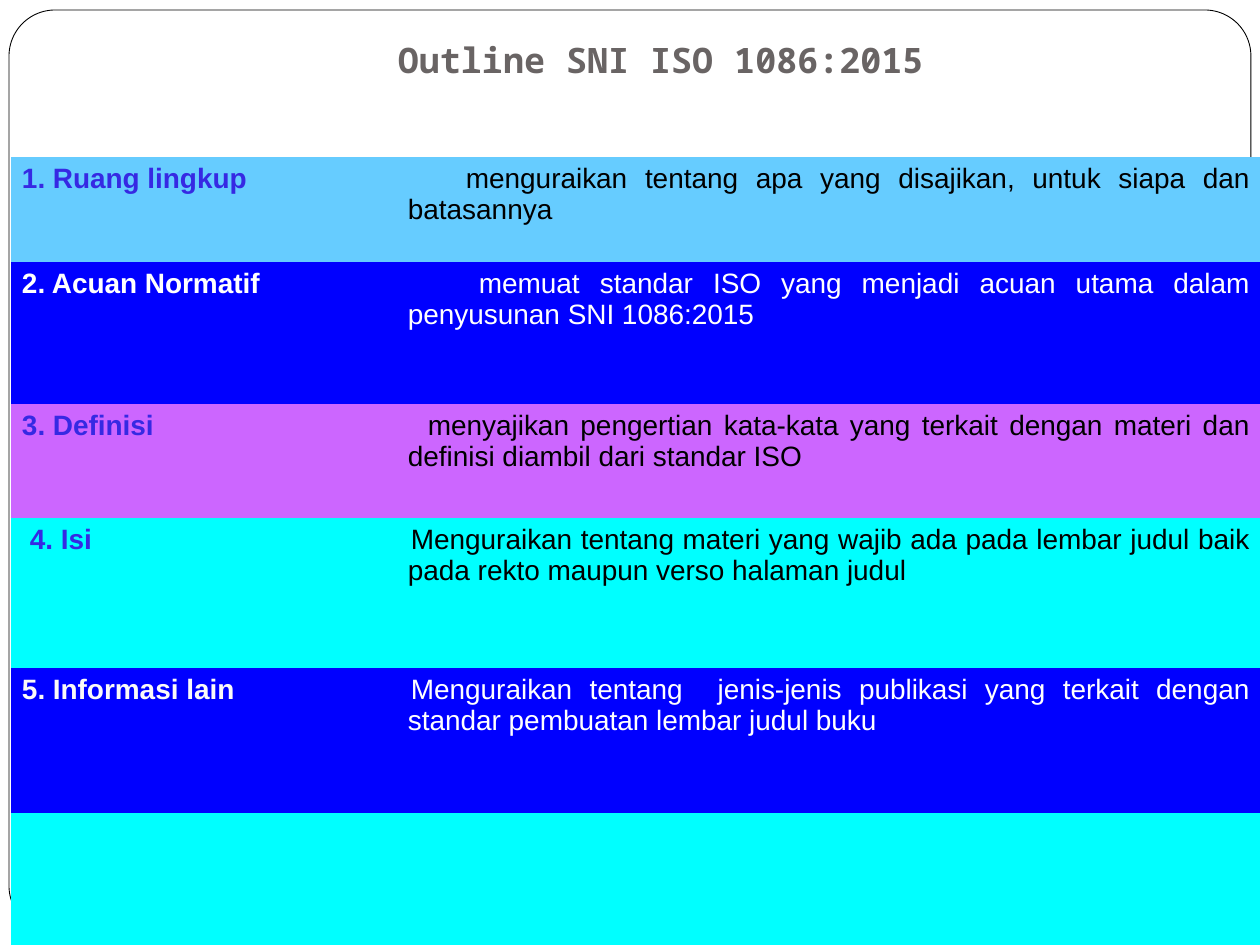
from dataclasses import dataclass

from pptx import Presentation
from pptx.dml.color import RGBColor
from pptx.enum.shapes import MSO_SHAPE
from pptx.enum.text import MSO_ANCHOR, PP_ALIGN
from pptx.util import Emu, Pt

PX_PER_INCH = 126
NO_STYLE = "{2D5ABB26-0587-4C30-8999-92F81FD0307C}"
COLUMNS = (339, 911)
HANGING = 47


@dataclass
class Section:
    """One table row: a heading, its description and their look."""
    height: int
    fill: str
    heading: str = ""
    text: str = ""
    heading_color: str = "3629E3"
    text_color: str = "000000"
    heading_indent: int = 0
    text_indent: int = 3


SECTIONS = [
    Section(105, "66CCFF", "1. Ruang lingkup",
            "menguraikan tentang apa yang disajikan, untuk siapa dan batasannya",
            text_indent=58),
    Section(142, "0000FF", "2. Acuan Normatif",
            "memuat standar ISO yang menjadi acuan utama dalam penyusunan SNI 1086:2015",
            "FFFFFF", "FFFFFF", text_indent=71),
    Section(114, "CC66FF", "3. Definisi",
            "menyajikan pengertian kata-kata yang terkait dengan materi dan "
            "definisi diambil dari standar ISO",
            text_indent=20),
    Section(150, "00FFFF", "4. Isi",
            "Menguraikan tentang materi yang wajib ada pada lembar judul baik "
            "pada rekto maupun verso halaman judul",
            heading_indent=8),
    Section(145, "0000FF", "5. Informasi lain",
            "Menguraikan tentang  jenis-jenis publikasi yang terkait dengan "
            "standar pembuatan lembar judul buku",
            "FBFAF8", "FFFFFF"),
    Section(132, "00FFFF"),
]


def px(n: int) -> Emu:
    """Turn pixels into EMU."""
    return Emu(round(n * 914400 / PX_PER_INCH))


def rgb(value: str) -> RGBColor:
    """Turn a hex string into a colour."""
    return RGBColor.from_string(value)


def style(p, font: str, size: int, color: str, bold: bool) -> None:
    """Format every run of a paragraph."""
    for r in p.runs:
        r.font.name = font
        r.font.size = Pt(size)
        r.font.bold = bold
        r.font.color.rgb = rgb(color)


def add_frame(s) -> None:
    """Draw the rounded page frame behind everything else."""
    sp = s.shapes.add_shape(MSO_SHAPE.ROUNDED_RECTANGLE, px(9), px(10), px(1242), px(922))
    sp.adjustments[0] = 0.05
    sp.shadow.inherit = False
    sp.fill.solid()
    sp.fill.fore_color.rgb = rgb("FFFFFF")
    sp.line.color.rgb = rgb("000000")
    sp.line.width = Pt(0.5)
    s.shapes.element.insert(2, sp.element)


def set_title(s, text: str) -> None:
    """Place and format the slide title."""
    sp = s.shapes.title
    sp.left, sp.top, sp.width, sp.height = px(220), px(32), px(882), px(55)
    tf = sp.text_frame
    tf.text = text
    tf.vertical_anchor = MSO_ANCHOR.MIDDLE
    p = tf.paragraphs[0]
    p.alignment = PP_ALIGN.CENTER
    style(p, "Noto Sans Mono", 20, "696464", True)


def fill_cell(cell, text: str, fill: str, color: str, bold: bool, left: int, indent: int) -> None:
    """Fill a cell and write its paragraph with the given indents."""
    cell.fill.solid()
    cell.fill.fore_color.rgb = rgb(fill)
    cell.margin_left = cell.margin_right = px(11)
    cell.margin_top = cell.margin_bottom = px(6)
    if not text:
        return
    cell.text_frame.text = text
    p = cell.text_frame.paragraphs[0]
    p.alignment = PP_ALIGN.LEFT if bold else PP_ALIGN.JUSTIFY
    pPr = p._p.get_or_add_pPr()
    pPr.set("marL", str(px(left)))
    pPr.set("indent", str(px(indent)))
    style(p, "Arial", 16, color, bold)


def add_outline(s, sections: list[Section]) -> None:
    """Add the table with one row for each section."""
    height = sum(section.height for section in sections)
    gf = s.shapes.add_table(len(sections), len(COLUMNS), px(11), px(157),
                            px(sum(COLUMNS)), px(height))
    gf.element.xpath(".//a:tableStyleId")[0].text = NO_STYLE
    table = gf.table
    table.first_row = table.horz_banding = False
    for column, width in zip(table.columns, COLUMNS):
        column.width = px(width)
    for i, section in enumerate(sections):
        table.rows[i].height = px(section.height)
        fill_cell(table.cell(i, 0), section.heading, section.fill,
                  section.heading_color, True, 0, section.heading_indent)
        fill_cell(table.cell(i, 1), section.text, section.fill,
                  section.text_color, False, HANGING, section.text_indent)


def main() -> None:
    """Build and save the slide."""
    prs = Presentation()
    prs.slide_width, prs.slide_height = px(1260), px(945)
    s = prs.slides.add_slide(prs.slide_layouts[5])
    add_frame(s)
    set_title(s, "Outline SNI ISO 1086:2015")
    add_outline(s, SECTIONS)
    prs.save("out.pptx")


if __name__ == "__main__":
    main()
